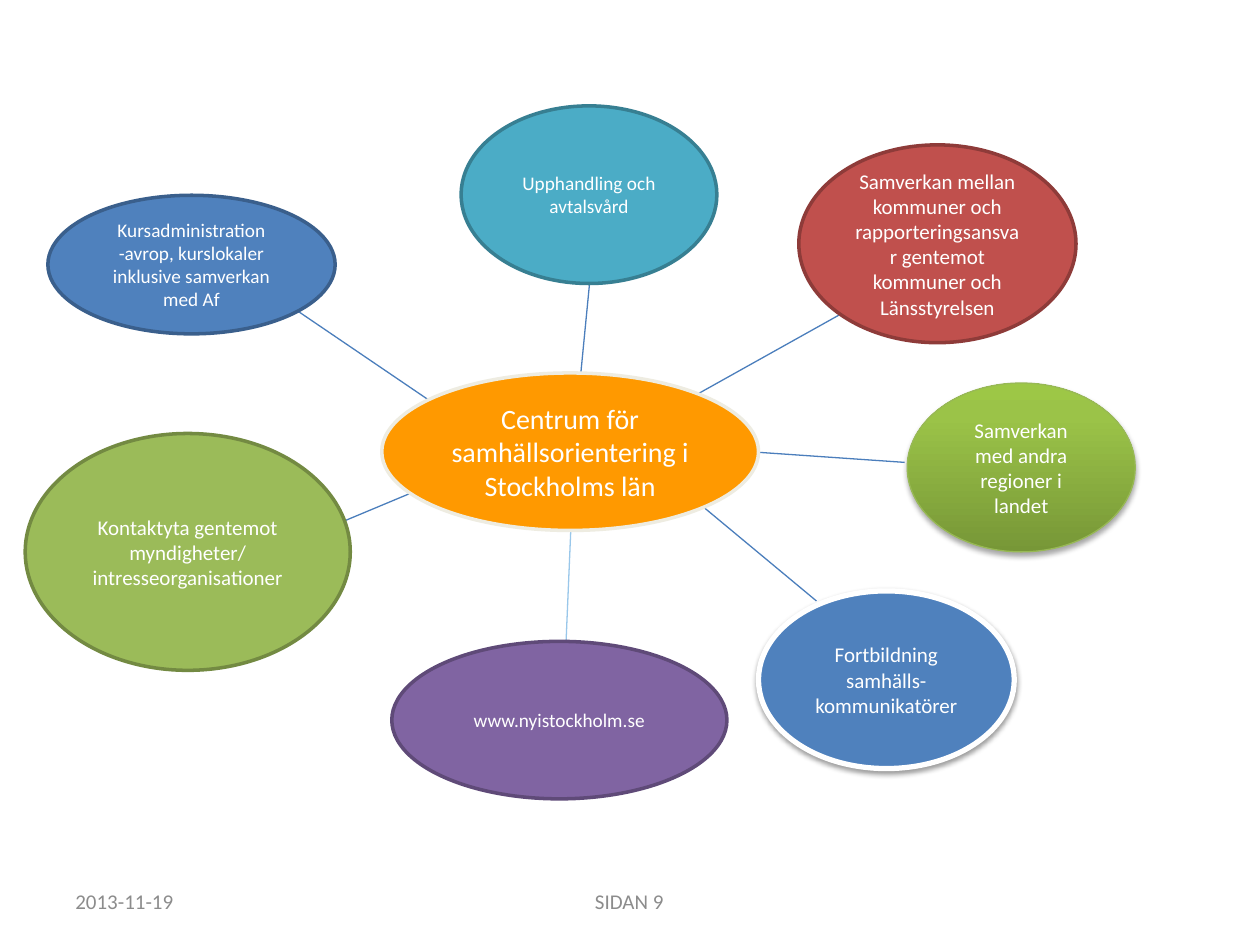
from pptx import Presentation
from pptx.dml.color import RGBColor
from pptx.enum.shapes import MSO_CONNECTOR, MSO_SHAPE
from pptx.enum.text import MSO_ANCHOR, PP_ALIGN
from pptx.oxml import parse_xml
from pptx.oxml.ns import nsdecls, qn
from pptx.util import Emu, Pt

PX = 9144  # 100 px to the inch
FONT = "Calibri"
COLORS = {
    "white": "FFFFFF", "footer": "8C8C8C",
    "spoke": "4B7EBC", "web_spoke": "99C7EA",
    "orange": "FF9900", "cream": "EEECE1",
    "blue": "4F81BD", "blue_edge": "3A5F8C",
    "red": "C0504D", "red_edge": "8E3B39",
    "green": "9BBB59", "green_edge": "738A42",
    "purple": "8064A2", "purple_edge": "5F4A78",
    "teal": "4BACC6", "teal_edge": "377F92",
    "lime_edge": "98B955",
}
LIME_STOPS = [(0, "779737"), (80, "9BC348"), (100, "9DC746")]

# box, text, size, fill, edge, edge width
TOPICS = [
    ((311, 509, 266, 125), "www.nyistockholm.se", 11, "purple", "purple_edge", 2),
    ((634, 115, 220, 157), "Samverkan mellan kommuner och rapporteringsansvar "
     "gentemot kommuner och Länsstyrelsen", 12, "red", "red_edge", 2),
    ((20, 344, 258, 188), "Kontaktyta gentemot myndigheter/\nintresseorganisationer",
     12, "green", "green_edge", 2),
    ((366, 84, 203, 141), "Upphandling och avtalsvård", 11, "teal", "teal_edge", 2),
    ((38, 155, 228, 110), "Kursadministration\n-avrop, kurslokaler inklusive samverkan med Af",
     11, "blue", "blue_edge", 2),
    ((303, 296, 299, 125), "Centrum för samhällsorientering i Stockholms län",
     16, "orange", "cream", 2),
]
FURTHER_TRAINING = ((602, 469, 203, 141), "Fortbildning samhälls-kommunikatörer",
                    12, "blue", "white", 3)
OTHER_REGIONS = ((720, 304, 181, 134), "Samverkan med andra regioner i landet",
                 12, "blue", "lime_edge", 0.75)

# start at the centre, end at the topic, colour
SPOKES = [
    ((369, 337), (235, 246), "spoke"),
    ((453, 421), (444, 634), "web_spoke"),
    ((555, 312), (666, 250), "spoke"),
    ((327, 391), (272, 414), "spoke"),
    ((461, 296), (468, 224), "spoke"),
    ((559, 403), (648, 477), "spoke"),
    ((602, 359), (718, 367), "spoke"),
]


def px(*lengths):
    return [Emu(length * PX) for length in lengths]


def rgb(name):
    return RGBColor.from_string(COLORS[name])


def write(frame, text, size, color, align):
    frame.word_wrap = True
    frame.vertical_anchor = MSO_ANCHOR.MIDDLE
    frame.text = text
    for paragraph in frame.paragraphs:
        paragraph.alignment = align
        paragraph.font.name = FONT
        paragraph.font.size = Pt(size)
        paragraph.font.color.rgb = rgb(color)


def add_spoke(slide, start, end, color):
    spoke = slide.shapes.add_connector(MSO_CONNECTOR.STRAIGHT, *px(*start, *end))
    spoke.line.color.rgb = rgb(color)
    spoke.line.width = Pt(0.75)
    spoke._element.spPr.append(parse_xml(f"<a:effectLst {nsdecls('a')}/>"))


def add_topic(slide, box, text, size, fill, edge, edge_width):
    topic = slide.shapes.add_shape(MSO_SHAPE.OVAL, *px(*box))
    topic.shadow.inherit = False
    topic.fill.solid()
    topic.fill.fore_color.rgb = rgb(fill)
    topic.line.color.rgb = rgb(edge)
    topic.line.width = Pt(edge_width)
    write(topic.text_frame, text, size, "white", PP_ALIGN.CENTER)
    return topic


def add_drop_shadow(shape, opacity, blur, distance):
    effects = shape._element.spPr.find(qn("a:effectLst"))
    effects.append(parse_xml(
        f'<a:outerShdw {nsdecls("a")} blurRad="{Pt(blur)}" dist="{Pt(distance)}" '
        f'dir="5400000" rotWithShape="0"><a:srgbClr val="000000">'
        f'<a:alpha val="{opacity * 1000}"/></a:srgbClr></a:outerShdw>'))


def fill_upward(shape, stops):
    """Fill with a gradient that runs from bottom to top."""
    shape.fill.gradient()
    shape.fill.gradient_angle = 90
    stop_list = shape._element.spPr.find(qn("a:gradFill")).find(qn("a:gsLst"))
    for old_stop in list(stop_list):
        stop_list.remove(old_stop)
    for position, color in stops:
        stop_list.append(parse_xml(
            f'<a:gs {nsdecls("a")} pos="{position * 1000}"><a:srgbClr val="{color}"/></a:gs>'))


def add_footer(slide, left, top, width, height):
    """Date at the left of the box and page number in the middle of the slide."""
    date = slide.shapes.add_textbox(*px(left, top, 233, height))
    write(date.text_frame, "2013-11-19", 12, "footer", PP_ALIGN.LEFT)
    page_width = 317
    page = slide.shapes.add_textbox(
        *px(left + (width - page_width) // 2, top, page_width, height))
    write(page.text_frame, "SIDAN 9", 12, "footer", PP_ALIGN.CENTER)


def add_topic_map(slide):
    for spoke in SPOKES:
        add_spoke(slide, *spoke)
    for topic in TOPICS:
        add_topic(slide, *topic)
    training = add_topic(slide, *FURTHER_TRAINING)
    add_drop_shadow(training, 38, 3.1, 1.6)
    regions = add_topic(slide, *OTHER_REGIONS)
    fill_upward(regions, LIME_STOPS)
    add_drop_shadow(regions, 35, 3.1, 1.8)


def main():
    presentation = Presentation()
    presentation.slide_width, presentation.slide_height = px(1000, 750)
    slide = presentation.slides.add_slide(presentation.slide_layouts[6])
    add_footer(slide, 50, 695, 900, 40)
    add_topic_map(slide)
    presentation.save("out.pptx")


if __name__ == "__main__":
    main()
